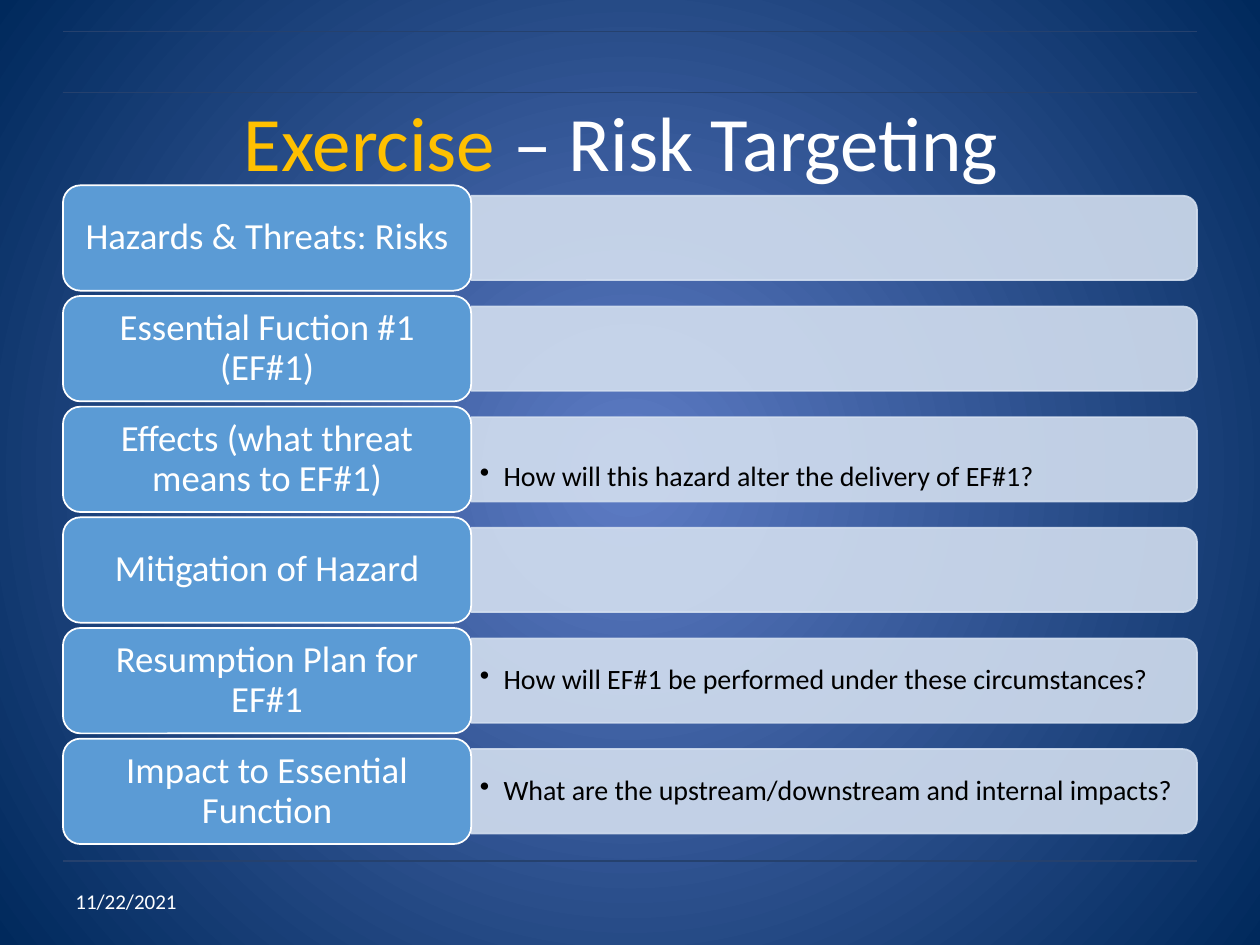
import pptx
import pptx.dml.color
import pptx.enum.shapes
import pptx.enum.text
import pptx.oxml
import pptx.oxml.ns
import pptx.util

Pt = pptx.util.Pt
RGB = pptx.dml.color.RGBColor
SHAPE = pptx.enum.shapes.MSO_SHAPE
ALIGN = pptx.enum.text.PP_ALIGN
ANCHOR = pptx.enum.text.MSO_ANCHOR
qn = pptx.oxml.ns.qn

GLOW = RGB(0x5E, 0x7C, 0xC5)
NAVY = RGB(0x00, 0x29, 0x5C)
RULE = RGB(0x25, 0x41, 0x6E)
GOLD = RGB(0xFF, 0xC0, 0x00)
WHITE = RGB(0xFF, 0xFF, 0xFF)
BLACK = RGB(0x00, 0x00, 0x00)
BLUE = RGB(0x5B, 0x9B, 0xD5)
PALE = RGB(0xD2, 0xDE, 0xEF)

LEFT, RIGHT = 36, 684
FIRST_MIDDLE, ROW_STEP = 136, 63.24
LABEL_W, LABEL_H = 233.28, 60.24
BAR_H, NOTE_H = 48.2, 43.5

ROWS = [
    ("Hazards & Threats: Risks", None, None),
    ("Essential Fuction #1 (EF#1)", None, None),
    ("Effects (what threat means to EF#1)",
     "How will this hazard alter the delivery of EF#1?", ANCHOR.BOTTOM),
    ("Mitigation of Hazard", None, None),
    ("Resumption Plan for EF#1",
     "How will EF#1 be performed under these circumstances?", ANCHOR.MIDDLE),
    ("Impact to Essential Function",
     "What are the upstream/downstream and internal impacts?", ANCHOR.MIDDLE),
]


def add_child(parent, tag, **attributes):
    child = pptx.oxml.parse_xml(f"<{tag} {pptx.oxml.ns.nsdecls('a')}/>")
    for name, value in attributes.items():
        child.set(name, str(value))
    parent.append(child)
    return child


def set_background(s):
    """Radial gradient, light in the centre and navy at the corners."""
    fill = s.background.fill
    fill.gradient()
    for stop, position, color in zip(fill.gradient_stops, (0, 1), (GLOW, NAVY)):
        stop.position = position
        stop.color.rgb = color
    gradient = s.element.find(".//" + qn("a:gradFill"))
    gradient.remove(gradient.find(qn("a:lin")))
    path = add_child(gradient, "a:path", path="circle")
    add_child(path, "a:fillToRect", l=50000, t=50000, r=50000, b=50000)


def add_rule(s, y):
    line = s.shapes.add_connector(pptx.enum.shapes.MSO_CONNECTOR.STRAIGHT,
                                  Pt(LEFT), Pt(y), Pt(RIGHT), Pt(y))
    line.line.color.rgb = RULE
    line.line.width = Pt(0.75)
    add_child(line.element.spPr, "a:effectLst")


def format_run(r, size, color):
    r.font.name = "Calibri"
    r.font.size = Pt(size)
    r.font.color.rgb = color


def prepare_frame(sp, anchor=ANCHOR.MIDDLE, margins=(7.2, 3.6)):
    tf = sp.text_frame
    tf.word_wrap = True
    tf.vertical_anchor = anchor
    tf.margin_left = tf.margin_right = Pt(margins[0])
    tf.margin_top = tf.margin_bottom = Pt(margins[1])
    return tf


def add_text(s, x, y, w, h, parts, size, align=ALIGN.LEFT):
    """Text box with one paragraph made of (text, colour) parts."""
    tf = prepare_frame(s.shapes.add_textbox(Pt(x), Pt(y), Pt(w), Pt(h)))
    p = tf.paragraphs[0]
    p.alignment = align
    for text, color in parts:
        r = p.add_run()
        r.text = text
        format_run(r, size, color)


def add_panel(s, kind, x, y, w, h, fill, line):
    sp = s.shapes.add_shape(kind, Pt(x), Pt(y), Pt(w), Pt(h))
    sp.shadow.inherit = False
    sp.fill.solid()
    sp.fill.fore_color.rgb = fill
    sp.line.color.rgb = line
    sp.line.width = Pt(1)
    return sp


def add_bar(s, middle):
    """Translucent bar, rounded on its right end by a quarter turn."""
    length = RIGHT - LEFT - LABEL_W
    center = RIGHT - length / 2
    sp = add_panel(s, SHAPE.ROUND_2_SAME_RECTANGLE, center - BAR_H / 2,
                   middle - length / 2, BAR_H, length, PALE, PALE)
    sp.rotation = 90
    for color in sp.element.spPr.iter(qn("a:srgbClr")):
        add_child(color, "a:alpha", val=90000)


def add_label(s, middle, text):
    sp = add_panel(s, SHAPE.ROUNDED_RECTANGLE, LEFT, middle - LABEL_H / 2,
                   LABEL_W, LABEL_H, BLUE, WHITE)
    tf = prepare_frame(sp, margins=(6.3, 3.15))
    tf.text = text
    p = tf.paragraphs[0]
    p.alignment = ALIGN.CENTER
    p.line_spacing = 0.9
    format_run(p.runs[0], 21, WHITE)


def add_note(s, middle, text, anchor):
    x = LEFT + LABEL_W
    sp = s.shapes.add_textbox(Pt(x), Pt(middle - NOTE_H / 2),
                              Pt(RIGHT - x - 2), Pt(NOTE_H))
    tf = prepare_frame(sp, anchor, (5, 2.5))
    tf.text = text
    p = tf.paragraphs[0]
    p.line_spacing = 0.9
    pPr = p._p.get_or_add_pPr()
    pPr.set("marL", str(Pt(13.5)))
    pPr.set("indent", str(-Pt(13.5)))
    add_child(pPr, "a:buChar", char="•")
    format_run(p.runs[0], 16, BLACK)


def main():
    prs = pptx.Presentation()
    prs.slide_width, prs.slide_height = Pt(720), Pt(540)
    s = prs.slides.add_slide(prs.slide_layouts[6])
    set_background(s)
    for y in (492, 18, 52.8):
        add_rule(s, y)
    add_text(s, LEFT, 35.5, RIGHT - LEFT, 90,
             [("Exercise", GOLD), (" – Risk Targeting ", WHITE)], 44, ALIGN.CENTER)
    add_text(s, LEFT, 500.5, 168, 28.75, [("11/22/2021", WHITE)], 12)
    for i, (label, note, anchor) in enumerate(ROWS):
        middle = FIRST_MIDDLE + i * ROW_STEP
        add_bar(s, middle)
        if note:
            add_note(s, middle, note, anchor)
        add_label(s, middle, label)
    prs.save("out.pptx")


if __name__ == "__main__":
    main()
